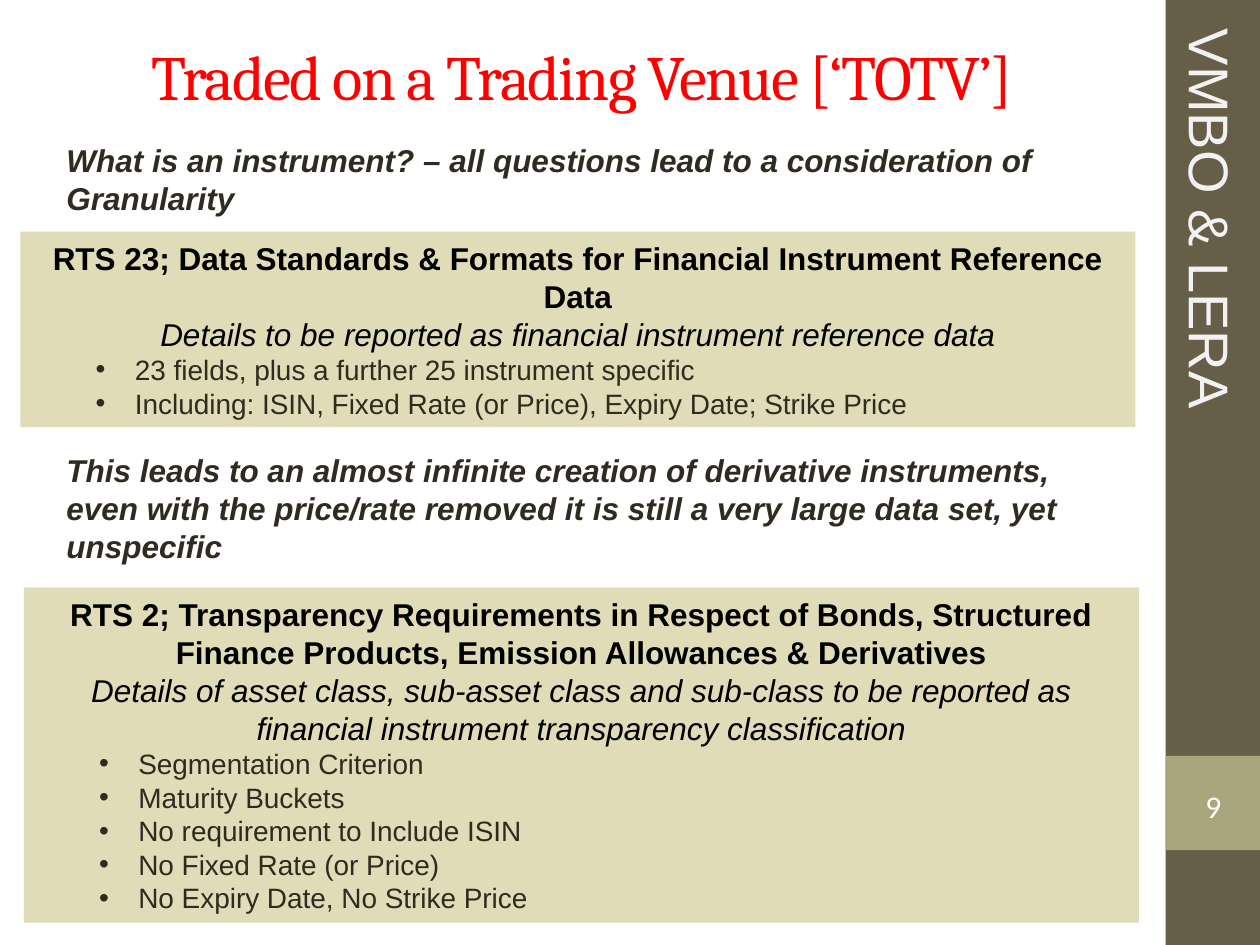
import pptx
import pptx.dml.color
import pptx.enum.shapes
import pptx.enum.text
import pptx.oxml.ns
import pptx.util
from lxml import etree

Cm = pptx.util.Cm
RGBColor = pptx.dml.color.RGBColor
MSO_SHAPE = pptx.enum.shapes.MSO_SHAPE
PP_ALIGN = pptx.enum.text.PP_ALIGN
MSO_ANCHOR = pptx.enum.text.MSO_ANCHOR

BROWN = RGBColor(0x67, 0x5E, 0x47)
OLIVE = RGBColor(0xA9, 0xA5, 0x7C)
SAND = RGBColor(0xDF, 0xDC, 0xB7)
INK = RGBColor(0x2F, 0x2B, 0x20)
RED = RGBColor(0xFF, 0x00, 0x00)
BLACK = RGBColor(0x00, 0x00, 0x00)
WHITE = RGBColor(0xFF, 0xFF, 0xFF)
PALE = RGBColor(0xF2, 0xF2, 0xF2)

RULES = [
    ((0.41, 4.67, 22.48, 3.94),
     "RTS 23; Data Standards & Formats for Financial Instrument Reference Data",
     "Details to be reported as financial instrument reference data",
     ["23 fields, plus a further 25 instrument specific",
      "Including: ISIN, Fixed Rate (or Price), Expiry Date; Strike Price"]),
    ((0.48, 11.84, 22.48, 6.76),
     "RTS 2; Transparency Requirements in Respect of Bonds, Structured "
     "Finance Products, Emission Allowances & Derivatives",
     "Details of asset class, sub-asset class and sub-class to be reported as "
     "financial instrument transparency classification",
     ["Segmentation Criterion", "Maturity Buckets",
      "No requirement to Include ISIN", "No Fixed Rate (or Price)",
      "No Expiry Date, No Strike Price"]),
]

STATEMENTS = [
    ((1.09, 2.72, 20.78, 1.8),
     "What is an instrument? – all questions lead to a consideration of Granularity"),
    ((1.09, 8.97, 21.79, 2.57),
     "This leads to an almost infinite creation of derivative instruments, even with "
     "the price/rate removed it is still a very large data set, yet unspecific"),
]


def write(paragraph, text, size, color, font="Arial", bold=False, italic=False,
          align=PP_ALIGN.LEFT):
    paragraph.text = text
    paragraph.alignment = align
    run_font = paragraph.runs[0].font
    run_font.name = font
    run_font.size = pptx.util.Pt(size)
    run_font.color.rgb = color
    run_font.bold = bold
    run_font.italic = italic


def add_bullet(paragraph):
    properties = paragraph._p.get_or_add_pPr()
    properties.set("marL", str(Cm(2.06)))
    properties.set("indent", str(Cm(-0.79)))
    bullet_font = etree.SubElement(properties, pptx.oxml.ns.qn("a:buFont"))
    bullet_font.set("typeface", "Arial")
    etree.SubElement(properties, pptx.oxml.ns.qn("a:buChar")).set("char", "•")


def add_panel(slide, box, fill, outline=MSO_SHAPE.RECTANGLE):
    """Add a shape without line or shadow; fill None leaves it clear."""
    panel = slide.shapes.add_shape(outline, *map(Cm, box))
    panel.shadow.inherit = False
    panel.line.fill.background()
    if fill is None:
        panel.fill.background()
    else:
        panel.fill.solid()
        panel.fill.fore_color.rgb = fill
    return panel


def add_label(slide, box):
    label = slide.shapes.add_textbox(*map(Cm, box))
    label.text_frame.word_wrap = True
    return label


def add_title(slide, box, text):
    frame = add_label(slide, box).text_frame
    frame.vertical_anchor = MSO_ANCHOR.MIDDLE
    heading = frame.paragraphs[0]
    write(heading, text, 36, RED, font="Cambria", align=PP_ALIGN.CENTER)
    heading.runs[0].font._element.set("spc", "-100")


def add_statement(slide, box, text):
    frame = add_label(slide, box).text_frame
    write(frame.paragraphs[0], text, 18, INK, bold=True, italic=True)


def add_rule(slide, box, heading, summary, points):
    frame = add_panel(slide, box, SAND).text_frame
    frame.word_wrap = True
    write(frame.paragraphs[0], heading, 18, BLACK, bold=True, align=PP_ALIGN.CENTER)
    write(frame.add_paragraph(), summary, 18, BLACK, italic=True, align=PP_ALIGN.CENTER)
    for point in points:
        item = frame.add_paragraph()
        item.level = 1
        write(item, point, 16, INK)
        add_bullet(item)


def add_sidebar(slide, box, owner, number):
    left, top, width, height = box
    add_panel(slide, box, BROWN)
    add_panel(slide, (left, top + 15.24, width, width), OLIVE)

    page = add_panel(slide, (left + 0.2, top + 15.7, 1.52, 1.09), None,
                     MSO_SHAPE.DOUBLE_BRACKET).text_frame
    page.margin_left = page.margin_right = page.margin_top = page.margin_bottom = 0
    write(page.paragraphs[0], number, 18, WHITE, font="Calibri", align=PP_ALIGN.CENTER)

    owner_label = add_label(slide, (left - 3.36, top + 3.78, 8.53, 1.63))
    owner_label.rotation = 90
    write(owner_label.text_frame.paragraphs[0], owner, 32, PALE)


def main():
    deck = pptx.Presentation()
    deck.slide_width, deck.slide_height = Cm(25.4), Cm(19.05)
    slide = deck.slides.add_slide(deck.slide_layouts[6])
    add_sidebar(slide, (23.5, 0, 1.9, 19.05), "VMBO & LERA", "9")
    add_title(slide, (0, -0.08, 23.47, 3.18), "Traded on a Trading Venue [‘TOTV’]")
    for rule in RULES:
        add_rule(slide, *rule)
    for statement in STATEMENTS:
        add_statement(slide, *statement)
    deck.save("out.pptx")


if __name__ == "__main__":
    main()
